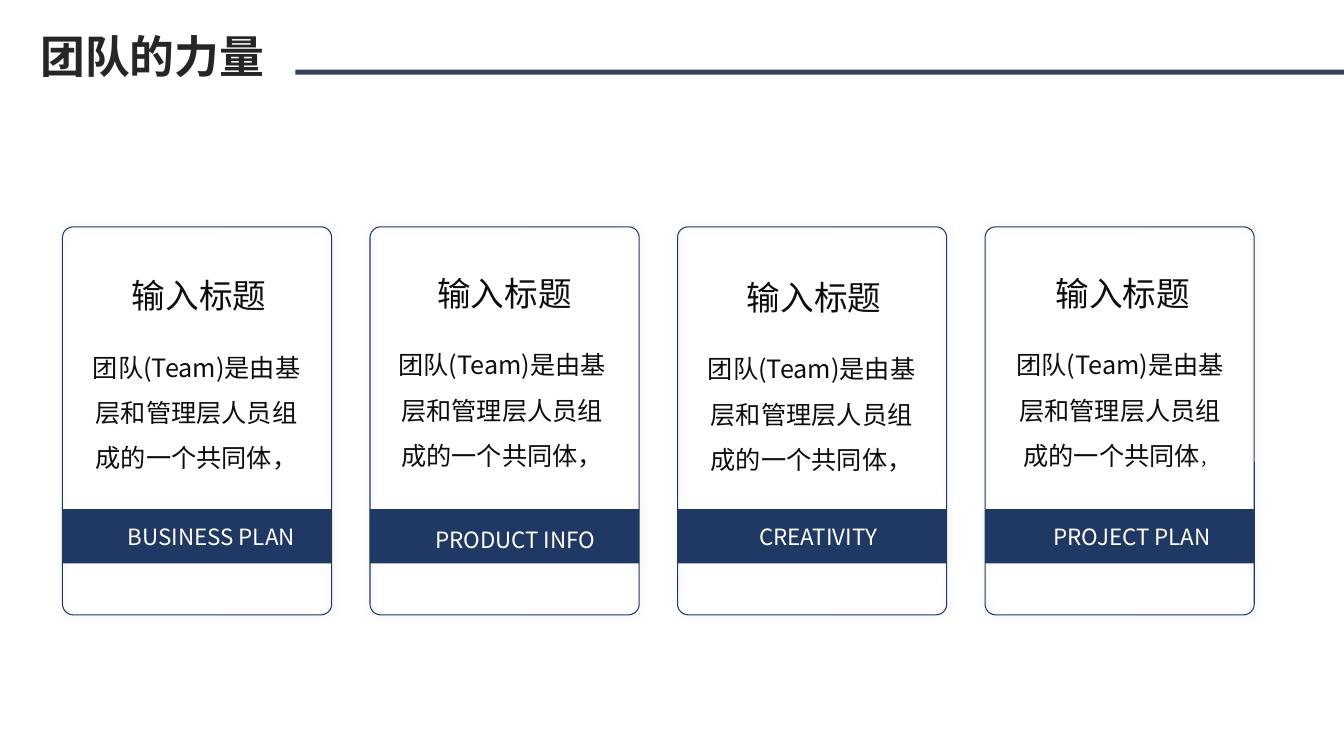
from lxml import etree
from pptx import Presentation
from pptx.dml.color import RGBColor
from pptx.enum.shapes import MSO_SHAPE
from pptx.enum.text import MSO_ANCHOR, MSO_AUTO_SIZE, PP_ALIGN
from pptx.oxml.ns import qn
from pptx.util import Inches, Pt

RECT, ROUND_RECT = MSO_SHAPE.RECTANGLE, MSO_SHAPE.ROUNDED_RECTANGLE
LEFT, CENTER = PP_ALIGN.LEFT, PP_ALIGN.CENTER
TOP, MIDDLE = MSO_ANCHOR.TOP, MSO_ANCHOR.MIDDLE
GROW = MSO_AUTO_SIZE.SHAPE_TO_FIT_TEXT

FONT = "Noto Sans CJK SC"
NAVY = RGBColor(0x20, 0x38, 0x64)
SLATE = RGBColor(0x35, 0x43, 0x5F)
INK = RGBColor(0x0D, 0x0D, 0x0D)
TITLE_INK = RGBColor(0x26, 0x26, 0x26)
WHITE = RGBColor(0xFF, 0xFF, 0xFF)

HEADING = "输入标题"
BODY = "团队(Team)是由基层和管理层人员组成的一个共同体"
COMMA = "，"
CARD_LEFT, CARD_TOP, CARD_W, CARD_H, CARD_STEP = 0.62, 2.25, 2.67, 3.85, 3.05

# label, label box (left, top, width), body text (left, top), size of the comma
CARDS = [
    ("BUSINESS PLAN", (1.17, 5.14, 1.94), (0.87, 3.34), 18),
    ("PRODUCT INFO", (4.22, 5.17, 1.9), (3.9, 3.32), 18),
    ("CREATIVITY", (7.43, 5.14, 1.44), (6.97, 3.36), 18),
    ("PROJECT PLAN", (10.35, 5.14, 1.82), (10.03, 3.32), 12),
]


class Deck:
    def __init__(self, prs):
        self.slide = prs.slides.add_slide(prs.slide_layouts[5])
        self.shapes = self.slide.shapes

    def set_text(self, sp, runs, color, align=LEFT, anchor=TOP, wrap=True,
                 spacing=None, inset=None, bold=False):
        """Fill a shape with one paragraph made of (text, size) runs."""
        tf = sp.text_frame
        tf.word_wrap, tf.auto_size, tf.vertical_anchor = wrap, GROW, anchor
        if inset is not None:
            tf.margin_left = tf.margin_right = Inches(inset)
            tf.margin_top = tf.margin_bottom = Inches(inset)
        p = tf.paragraphs[0]
        p.alignment, p.line_spacing = align, spacing
        for text, size in runs:
            r = p.add_run()
            r.text = text
            r.font.size, r.font.bold, r.font.name = Pt(size), bold, FONT
            r.font.color.rgb = color
            rPr = r._r.get_or_add_rPr()
            rPr.set("lang", "zh-CN")
            etree.SubElement(rPr, qn("a:ea"), typeface=FONT)

    def title(self, text, *box):
        sp = self.shapes.title
        sp.left, sp.top, sp.width, sp.height = map(Inches, box)
        self.set_text(sp, [(text, 32)], TITLE_INK, bold=True)

    def text(self, box, runs, color, **style):
        sp = self.shapes.add_textbox(*map(Inches, box))
        self.set_text(sp, runs, color, **style)

    def bar(self, color, *box):
        sp = self.shapes.add_shape(RECT, *map(Inches, box))
        sp.shadow.inherit = False
        sp.fill.solid()
        sp.fill.fore_color.rgb = color
        sp.line.fill.background()

    def frame(self, *box):
        """Draw a rounded outline with a faint, soft shadow."""
        sp = self.shapes.add_shape(ROUND_RECT, *map(Inches, box))
        sp.adjustments[0] = 0.04
        sp.fill.background()
        sp.line.color.rgb = NAVY
        sp.line.width = Pt(0.75)
        sp.shadow.inherit = False
        effects = sp._element.spPr.find(qn("a:effectLst"))
        shadow = etree.SubElement(effects, qn("a:outerShdw"), blurRad=str(Pt(6)),
                                  dist="0", dir="18900000", rotWithShape="0")
        black = etree.SubElement(shadow, qn("a:srgbClr"), val="000000")
        etree.SubElement(black, qn("a:alpha"), val="20000")

    def card(self, left, label, label_box, body_at, comma_size):
        self.frame(left, CARD_TOP, CARD_W, CARD_H)
        self.bar(NAVY, left, 5.05, CARD_W, 0.54)
        self.text((*label_box, 0.37), [(label, 16)], WHITE, wrap=False)
        x, y = body_at
        style = dict(align=CENTER, spacing=1.5, inset=0)
        runs = [(BODY + COMMA, 18)]
        if comma_size != 18:
            runs = [(BODY, 18), (COMMA, comma_size)]
        self.text((x, y, 2.16, 1.31), runs, INK, **style)
        self.text((x + 0.43, y - 0.78, 1.35, 0.53), [(HEADING, 24)], INK,
                  anchor=MIDDLE, wrap=False, **style)


def main():
    prs = Presentation()
    prs.slide_width, prs.slide_height = Inches(13.33), Inches(7.5)
    deck = Deck(prs)
    deck.bar(SLATE, 2.93, 0.69, 10.4, 0.05)
    deck.title("团队的力量", 0.3, 0.23, 2.46, 0.64)
    for i, card in enumerate(CARDS):
        deck.card(CARD_LEFT + i * CARD_STEP, *card)
    prs.save("out.pptx")


if __name__ == "__main__":
    main()
